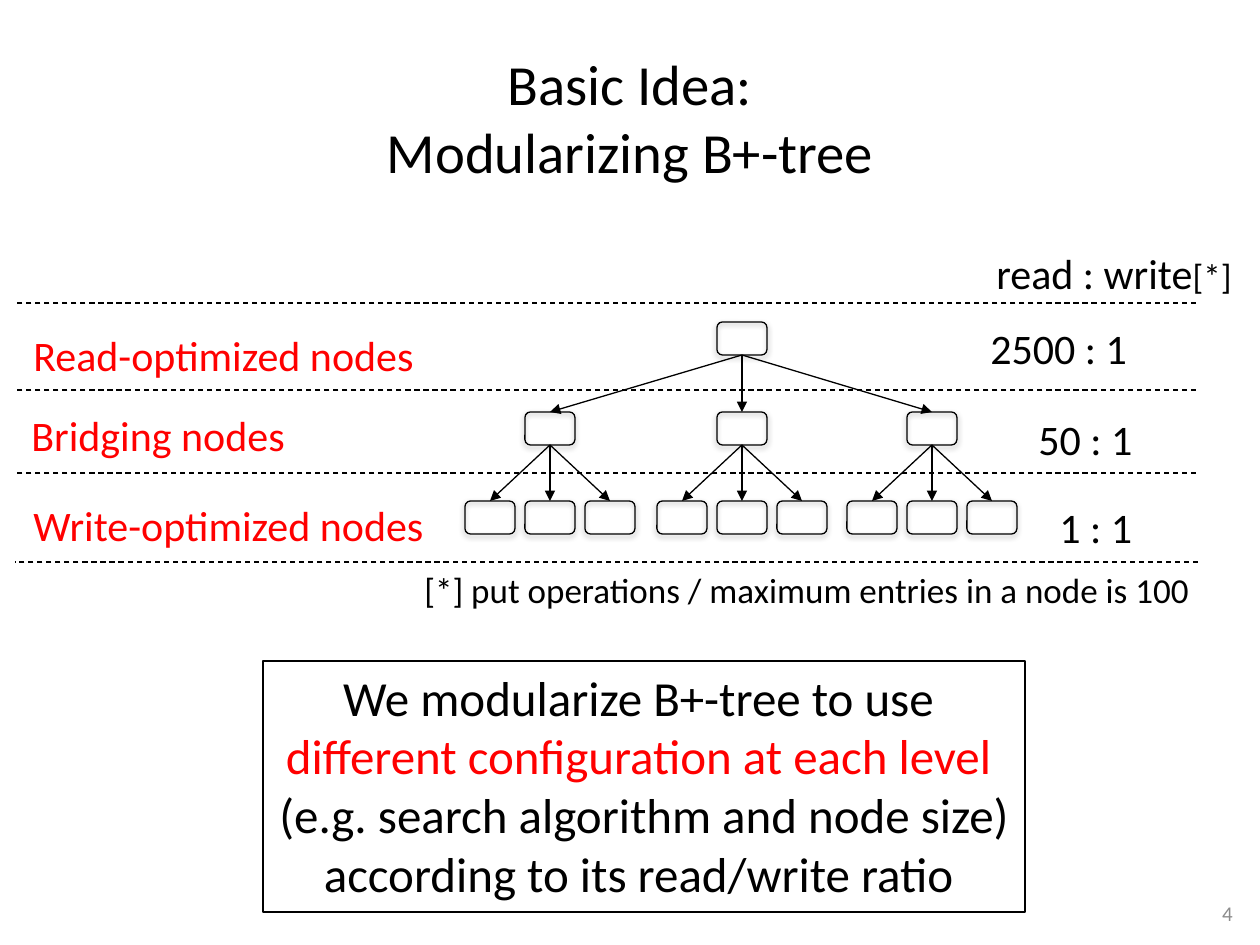
from dataclasses import dataclass
from lxml.etree import SubElement
from pptx import Presentation
from pptx.dml.color import RGBColor as Rgb
from pptx.enum.dml import MSO_LINE as Dash
from pptx.enum.shapes import MSO_CONNECTOR as Link, MSO_SHAPE as Shape
from pptx.enum.text import MSO_ANCHOR as Anchor, PP_ALIGN as Align
from pptx.oxml import parse_xml
from pptx.oxml.ns import nsdecls, qn
from pptx.util import Pt

PX = 914400 / 126


@dataclass(frozen=True)
class Theme:
    font: str = "Calibri"
    ink: str = "000000"
    red: str = "FF0000"
    gray: str = "8C8C8C"
    title: float = 32.4
    claim: int = 28
    body: int = 24
    note: int = 20
    page: int = 12
    line: float = 0.75


T = Theme()
SHADOW = (f'<a:effectLst {nsdecls("a")}><a:outerShdw blurRad="39370" dist="20320" dir="5400000" '
          'rotWithShape="0"><a:srgbClr val="000000"><a:alpha val="38000"/></a:srgbClr>'
          '</a:outerShdw></a:effectLst>')

deck = Presentation()
deck.slide_width, deck.slide_height = (round(n * PX) for n in (1260, 945))
slide = deck.slides.add_slide(deck.slide_layouts[6])
shapes = slide.shapes


def write(text, box, size=T.body, color=T.ink, align=Align.LEFT, anchor=Anchor.TOP,
          wrap=False, tints=None, tail="", edge=False):
    """Add a text box; tints maps a line number to a colour, tail is a smaller last run."""
    item = shapes.add_textbox(*(round(n * PX) for n in box))
    if edge:
        item.line.color.rgb = Rgb.from_string(T.ink)
        item.line.width = Pt(T.line)
    frame = item.text_frame
    frame.word_wrap, frame.vertical_anchor = wrap, anchor
    frame.text = text
    for row, para in enumerate(frame.paragraphs):
        para.alignment = align
        if tail:
            para.add_run().text = tail
        for run in para.runs:
            font = run.font
            font.name = T.font
            font.size = Pt(T.note if tail and run.text == tail else size)
            font.color.rgb = Rgb.from_string((tints or {}).get(row, color))


def draw(x1, y1, x2, y2, arrow=False):
    """Draw an arrow, or a dashed rule."""
    line = shapes.add_connector(Link.STRAIGHT, *(round(n * PX) for n in (x1, y1, x2, y2)))
    line.line.color.rgb = Rgb.from_string(T.ink)
    line.line.width = Pt(T.line)
    if arrow:
        SubElement(line.line._get_or_add_ln(), qn("a:tailEnd"), type="triangle")
    else:
        line.line.dash_style = Dash.DASH
    SubElement(line._element.spPr, qn("a:effectLst"))


write("Basic Idea:\vModularizing B+-tree", (63, 38, 1134, 157), size=T.title,
      align=Align.CENTER, anchor=Anchor.MIDDLE, wrap=True)

# Tree: each node is its centre, its top and the centre of its parent
WIDE, HIGH, STEP = 50, 33, 60
ROOT, MIDS = 742, (550, 742, 932)
TOPS = (322, 412, 501)
nodes = [(ROOT, 0, None)]
for mid in MIDS:
    nodes.append((mid, 1, ROOT))
    nodes += [(mid + k * STEP, 2, mid) for k in (-1, 0, 1)]

for x, level, up in nodes:
    top = TOPS[level]
    node = shapes.add_shape(Shape.ROUNDED_RECTANGLE,
                            *(round(n * PX) for n in (x - WIDE / 2, top, WIDE, HIGH)))
    node.fill.background()
    node.line.color.rgb = Rgb.from_string(T.ink)
    node.line.width = Pt(T.line)
    node._element.spPr.append(parse_xml(SHADOW))
    if up is not None:
        draw(up, TOPS[level - 1] + HIGH, x, top, arrow=True)

# Level bands
for y, end in ((303, 1196), (390, 1196), (473, 1196), (562, 1198)):
    draw(end, y, 15, y)

for text, box in (("Read-optimized nodes", (21, 323, 410, 63)),
                  ("Bridging nodes", (19, 403, 281, 63)),
                  ("Write-optimized nodes", (21, 493, 420, 63))):
    write(text, box, color=T.red)

for text, box in (("2500 : 1", (978, 316, 163, 63)),
                  ("50 : 1", (1026, 407, 120, 63)),
                  ("1 : 1", (1047, 495, 98, 63))):
    write(text, box)

write("read : write", (984, 241, 271, 63), tail="[*]")
write("[*] put operations / maximum entries in a node is 100", (412, 562, 814, 55),
      size=T.note, wrap=True)

write("We modularize B+-tree to use \n"
      "different configuration at each level \n"
      "(e.g. search algorithm and node size)\n"
      "according to its read/write ratio ",
      (263, 661, 762, 251), size=T.claim, align=Align.CENTER, tints={1: T.red}, edge=True)

write("4", (951, 888, 294, 50), size=T.page, color=T.gray, align=Align.RIGHT,
      anchor=Anchor.MIDDLE, wrap=True)

deck.save("out.pptx")
